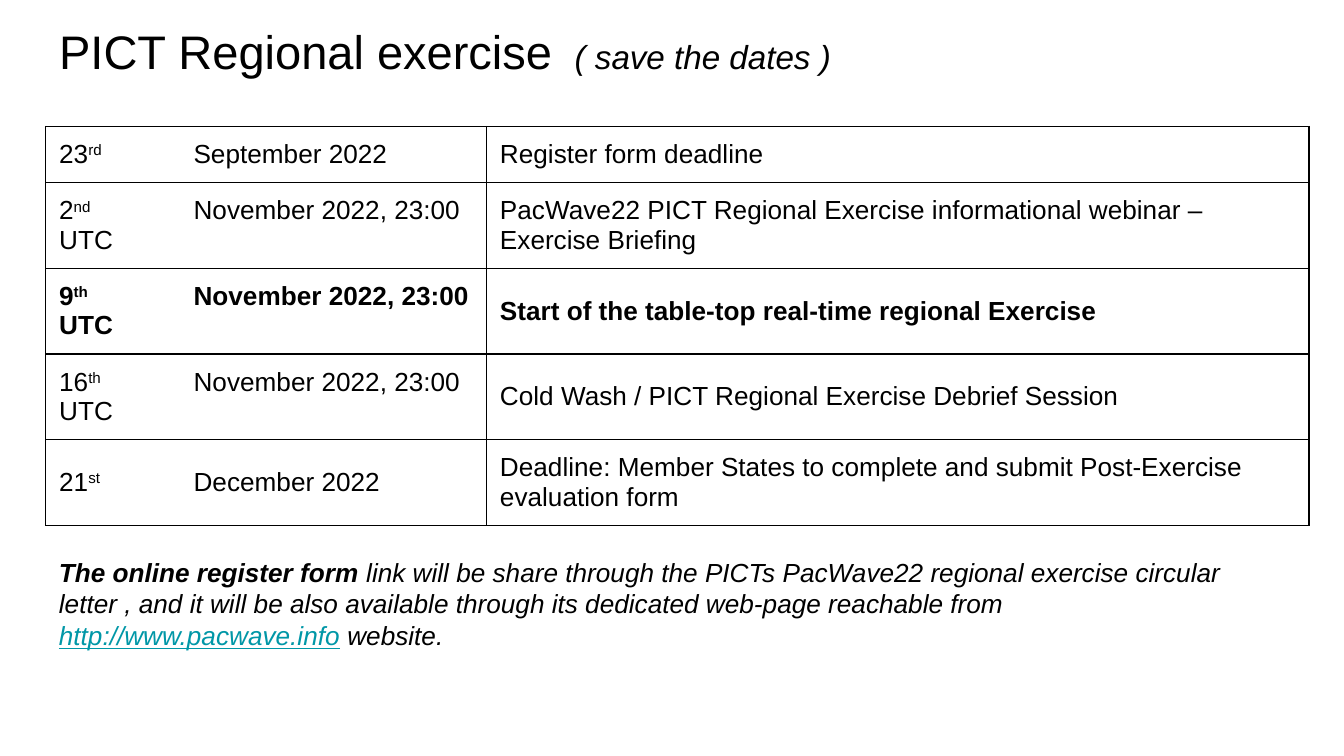
from dataclasses import dataclass

from lxml.etree import SubElement
from pptx import Presentation
from pptx.dml.color import RGBColor
from pptx.enum.text import MSO_ANCHOR, PP_ALIGN
from pptx.oxml.ns import qn
from pptx.slide import Slide
from pptx.table import _Cell
from pptx.text.text import TextFrame, _Paragraph
from pptx.util import Inches, Pt


@dataclass(frozen=True)
class Theme:
    font: str = "Arial"
    text: str = "000000"
    link: str = "0097A7"
    title_size: float = 25.2
    subtitle_size: float = 17.8
    body_size: float = 14
    border_width: float = 0.75
    inset: float = 0.1


@dataclass(frozen=True)
class Milestone:
    day: str
    suffix: str
    date: str
    event: str
    bold: bool = False


THEME = Theme()
SLIDE_WIDTH = 10
SLIDE_HEIGHT = SLIDE_WIDTH * 9 / 16
LEFT, WIDTH = 0.34, 9.32
COLUMN_WIDTHS = (3.28, 6.12)
ROW_HEIGHT = 0.26
DATE_TAB = 1
MILESTONES = (
    Milestone("23", "rd", "September 2022", "Register form deadline"),
    Milestone("2", "nd", "November 2022, 23:00 UTC",
              "PacWave22 PICT Regional Exercise informational webinar – Exercise Briefing"),
    Milestone("9", "th", "November 2022, 23:00 UTC",
              "Start of the table-top real-time regional Exercise", bold=True),
    Milestone("16", "th", "November 2022, 23:00 UTC",
              "Cold Wash / PICT Regional Exercise Debrief Session"),
    Milestone("21", "st", "December 2022",
              "Deadline: Member States to complete and submit Post-Exercise evaluation form"),
)


def add_run(paragraph: _Paragraph, text: str, size: float = THEME.body_size,
            color: str = THEME.text, bold: bool = False, italic: bool = False,
            underline: bool = False, superscript: bool = False) -> None:
    """Append one formatted run to a paragraph."""
    run = paragraph.add_run()
    run.text = text
    font = run.font
    font.name, font.size = THEME.font, Pt(size)
    font.bold, font.italic, font.underline = bold, italic, underline
    font.color.rgb = RGBColor.from_string(color)
    if superscript:
        run._r.get_or_add_rPr().set("baseline", "30000")


def set_insets(target: TextFrame | _Cell) -> None:
    """Give a text frame or cell the common inner margin on all sides."""
    target.margin_left = target.margin_right = Inches(THEME.inset)
    target.margin_top = target.margin_bottom = Inches(THEME.inset)


def add_tab_stop(paragraph: _Paragraph, position: float) -> None:
    """Add a left tab stop to a paragraph."""
    tabs = SubElement(paragraph._p.get_or_add_pPr(), qn("a:tabLst"))
    SubElement(tabs, qn("a:tab"), pos=str(Inches(position)), algn="l")


def format_cell(cell: _Cell) -> None:
    """Give a cell plain borders, no fill and centred anchoring."""
    set_insets(cell)
    cell.vertical_anchor = MSO_ANCHOR.MIDDLE
    properties = cell._tc.get_or_add_tcPr()
    for side in ("a:lnL", "a:lnR", "a:lnT", "a:lnB"):
        line = SubElement(properties, qn(side), w=str(Pt(THEME.border_width)))
        fill = SubElement(line, qn("a:solidFill"))
        SubElement(fill, qn("a:srgbClr"), val=THEME.text)
    cell.fill.background()


def add_title(slide: Slide) -> None:
    """Fill and place the title placeholder."""
    title = slide.shapes.title
    title.left, title.top = Inches(LEFT), Inches(0.06)
    title.width, title.height = Inches(WIDTH), Inches(0.63)
    frame = title.text_frame
    set_insets(frame)
    frame.vertical_anchor = MSO_ANCHOR.BOTTOM
    paragraph = frame.paragraphs[0]
    paragraph.alignment = PP_ALIGN.LEFT
    add_run(paragraph, "PICT Regional exercise ", THEME.title_size)
    add_run(paragraph, " ( save the dates )", THEME.subtitle_size, italic=True)


def add_schedule(slide: Slide) -> None:
    """Draw the table of exercise dates, whose rows grow to fit their text."""
    table = slide.shapes.add_table(
        len(MILESTONES), len(COLUMN_WIDTHS), Inches(LEFT), Inches(0.94),
        Inches(sum(COLUMN_WIDTHS)), Inches(ROW_HEIGHT * len(MILESTONES))).table
    table.first_row = table.horz_banding = False
    for column, width in zip(table.columns, COLUMN_WIDTHS):
        column.width = Inches(width)
    for row, milestone in zip(table.rows, MILESTONES):
        date_cell, event_cell = row.cells
        format_cell(date_cell)
        format_cell(event_cell)
        date = date_cell.text_frame.paragraphs[0]
        add_tab_stop(date, DATE_TAB)
        add_run(date, milestone.day, bold=milestone.bold)
        add_run(date, milestone.suffix, bold=milestone.bold, superscript=True)
        add_run(date, f" \t{milestone.date}", bold=milestone.bold)
        add_run(event_cell.text_frame.paragraphs[0], milestone.event, bold=milestone.bold)


def add_note(slide: Slide) -> None:
    """Write the registration note under the table."""
    frame = slide.shapes.add_textbox(
        Inches(LEFT), Inches(4.04), Inches(WIDTH), Inches(0.91)).text_frame
    frame.word_wrap = True
    set_insets(frame)
    paragraph = frame.paragraphs[0]
    add_run(paragraph, "The online register form ", bold=True, italic=True)
    add_run(paragraph, "link will be share through the PICTs PacWave22 regional exercise "
            "circular letter , and it will be also available through its dedicated "
            "web-page reachable from ", italic=True)
    add_run(paragraph, "http://www.pacwave.info", color=THEME.link, italic=True, underline=True)
    add_run(paragraph, " website.", italic=True)


def main() -> None:
    """Build the presentation and save it."""
    presentation = Presentation()
    presentation.slide_width = Inches(SLIDE_WIDTH)
    presentation.slide_height = Inches(SLIDE_HEIGHT)
    slide = presentation.slides.add_slide(presentation.slide_layouts.get_by_name("Title Only"))
    add_title(slide)
    add_schedule(slide)
    add_note(slide)
    presentation.save("out.pptx")


if __name__ == "__main__":
    main()
